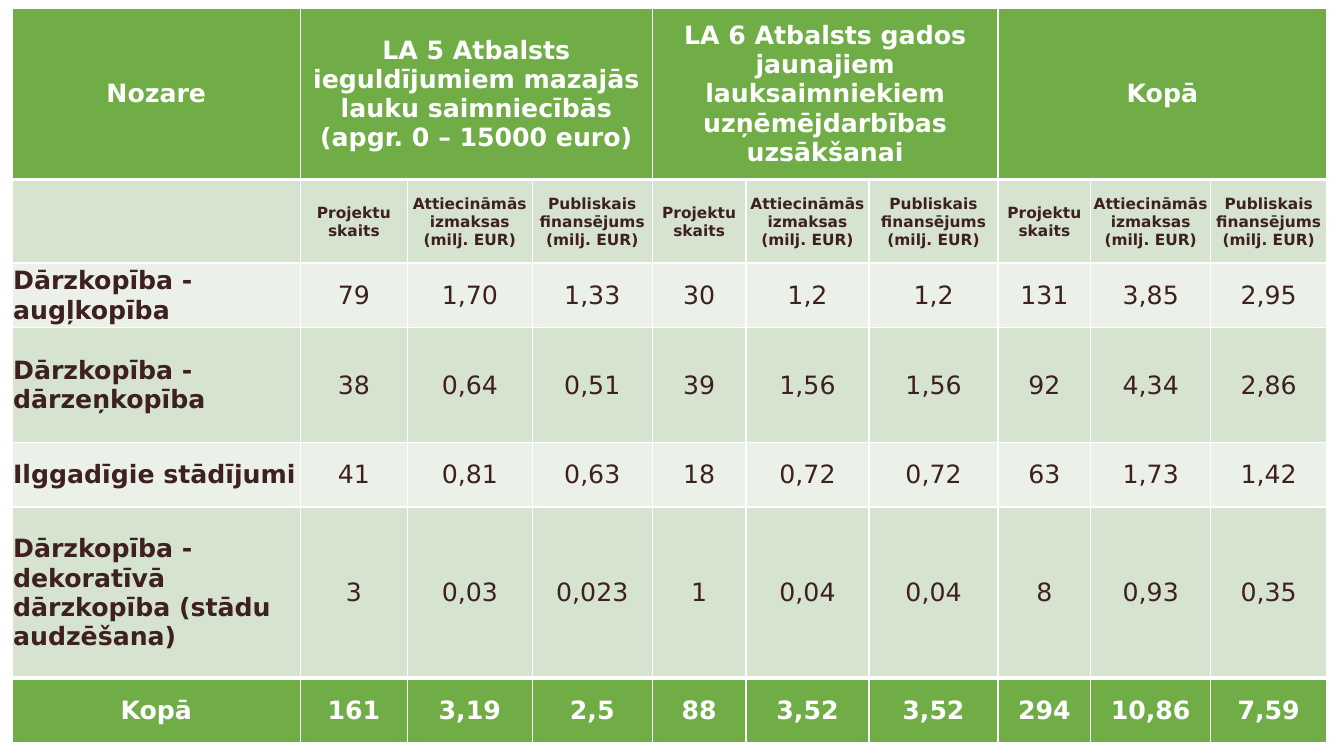
import dataclasses

import pptx
import pptx.dml.color
import pptx.enum.text
import pptx.oxml
import pptx.oxml.ns
import pptx.table
import pptx.util

Inches = pptx.util.Inches
RGBColor = pptx.dml.color.RGBColor
Align = pptx.enum.text.PP_ALIGN

WHITE = RGBColor(0xFF, 0xFF, 0xFF)
GREEN = RGBColor(0x70, 0xAD, 0x47)
SAGE = RGBColor(0xD5, 0xE3, 0xCF)
MIST = RGBColor(0xEB, 0xF1, 0xE9)
BROWN = RGBColor(0x3F, 0x20, 0x21)

FONT_NAME = "DejaVu Sans"
COLUMN_WIDTHS = (2.86, 1.06, 1.24, 1.19, 0.93, 1.22, 1.28, 0.92, 1.19, 1.15)
MEASURES = (
    "Projektu skaits",
    "Attiecināmās izmaksas (milj. EUR)",
    "Publiskais finansējums (milj. EUR)",
)
GROUP_SIZE = len(MEASURES)
MARGINS = {
    "margin_left": Inches(0.01),
    "margin_top": Inches(0.01),
    "margin_right": Inches(0.01),
    "margin_bottom": Inches(0),
    "vertical_anchor": pptx.enum.text.MSO_ANCHOR.MIDDLE,
}


@dataclasses.dataclass(frozen=True)
class RowStyle:
    fill: RGBColor
    color: RGBColor = BROWN
    size: int = 18
    label_align: Align = Align.LEFT
    bold_values: bool = False
    top_line: int = 1
    bottom_line: int = 1


@dataclasses.dataclass(frozen=True)
class SectorRow:
    height: float
    label: str
    values: tuple[str, ...]
    style: RowStyle


HEADING = RowStyle(GREEN, WHITE, label_align=Align.CENTER, bold_values=True, bottom_line=3)
SUBHEADING = RowStyle(SAGE, size=11, bold_values=True, top_line=3)
DARK_BAND = RowStyle(SAGE)
LIGHT_BAND = RowStyle(MIST)
LAST_BAND = RowStyle(SAGE, bottom_line=3)
TOTAL = RowStyle(GREEN, WHITE, label_align=Align.CENTER, bold_values=True, top_line=3)

GROUPS = (
    "LA 5 Atbalsts ieguldījumiem mazajās lauku saimniecībās (apgr. 0 – 15000 euro)",
    "LA 6 Atbalsts gados jaunajiem lauksaimniekiem uzņēmējdarbības uzsākšanai",
    "Kopā",
)
ROWS = (
    SectorRow(1.7, "Nozare", tuple(
        text for group in GROUPS for text in (group, *[""] * (GROUP_SIZE - 1))
    ), HEADING),
    SectorRow(0.83, "", MEASURES * len(GROUPS), SUBHEADING),
    SectorRow(0.64, "Dārzkopība - augļkopība",
              ("79", "1,70", "1,33", "30", "1,2", "1,2", "131", "3,85", "2,95"), LIGHT_BAND),
    SectorRow(1.14, "Dārzkopība - dārzeņkopība",
              ("38", "0,64", "0,51", "39", "1,56", "1,56", "92", "4,34", "2,86"), DARK_BAND),
    SectorRow(0.64, "Ilggadīgie stādījumi",
              ("41", "0,81", "0,63", "18", "0,72", "0,72", "63", "1,73", "1,42"), LIGHT_BAND),
    SectorRow(1.7, "Dārzkopība - dekoratīvā dārzkopība (stādu audzēšana)",
              ("3", "0,03", "0,023", "1", "0,04", "0,04", "8", "0,93", "0,35"), LAST_BAND),
    SectorRow(0.64, "Kopā",
              ("161", "3,19", "2,5", "88", "3,52", "3,52", "294", "10,86", "7,59"), TOTAL),
)


def set_attributes(target: object, values: dict[str, object]) -> None:
    for name, value in values.items():
        setattr(target, name, value)


def add_borders(table: pptx.table.Table, row: int, column: int, style: RowStyle) -> None:
    properties = table.cell(row, column)._tc.get_or_add_tcPr()
    widths = {"lnL": 1, "lnR": 1, "lnT": style.top_line, "lnB": style.bottom_line}
    for tag, width in widths.items():
        properties.append(pptx.oxml.parse_xml(
            f'<a:{tag} {pptx.oxml.ns.nsdecls("a")} w="{pptx.util.Pt(width)}">'
            f'<a:solidFill><a:srgbClr val="{WHITE}"/></a:solidFill></a:{tag}>'
        ))


def fill_cell(table: pptx.table.Table, row: int, column: int, text: str, style: RowStyle) -> None:
    cell = table.cell(row, column)
    set_attributes(cell, MARGINS)
    add_borders(table, row, column, style)
    cell.fill.solid()
    cell.fill.fore_color.rgb = style.fill
    if not text:
        return
    is_label = column == 0
    para = cell.text_frame.paragraphs[0]
    para.alignment = style.label_align if is_label else Align.CENTER
    span = para.add_run()
    span.text = text
    set_attributes(span.font, {
        "name": FONT_NAME,
        "size": pptx.util.Pt(style.size),
        "bold": is_label or style.bold_values,
    })
    span.font.color.rgb = style.color


def main() -> None:
    deck = pptx.Presentation()
    set_attributes(deck, {"slide_width": Inches(13.33), "slide_height": Inches(7.5)})
    page = deck.slides.add_slide(deck.slide_layouts[6])
    table = page.shapes.add_table(
        len(ROWS), len(COLUMN_WIDTHS),
        Inches(0.12), Inches(0.08), Inches(13.03), Inches(7.29),
    ).table
    set_attributes(table, {"first_row": False, "horz_banding": False})
    for column, width in zip(table.columns, COLUMN_WIDTHS):
        column.width = Inches(width)
    for row, sector in enumerate(ROWS):
        table.rows[row].height = Inches(sector.height)
        for column, text in enumerate((sector.label, *sector.values)):
            fill_cell(table, row, column, text, sector.style)
    for start in range(1, len(COLUMN_WIDTHS), GROUP_SIZE):
        table.cell(0, start).merge(table.cell(0, start + GROUP_SIZE - 1))
    deck.save("out.pptx")


if __name__ == "__main__":
    main()
